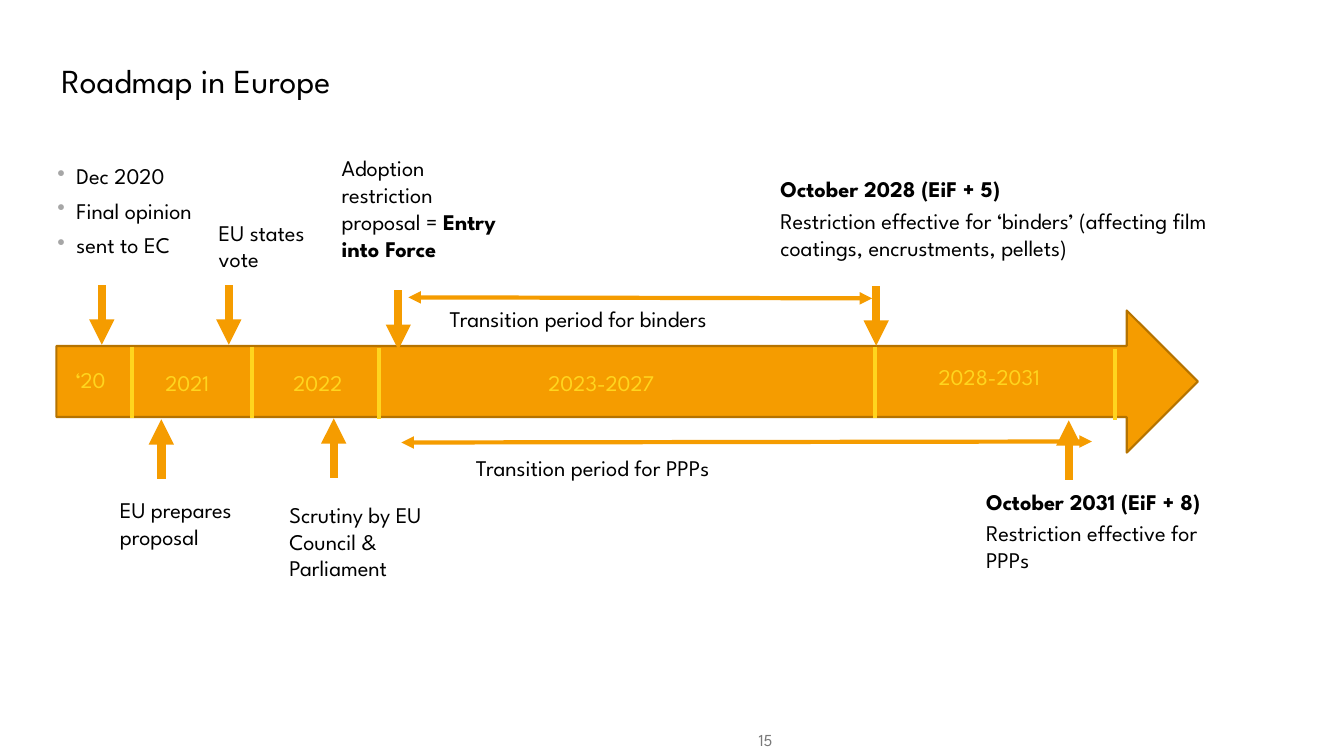
from lxml import etree
from pptx import Presentation
from pptx.dml.color import RGBColor
from pptx.enum.shapes import MSO_CONNECTOR, MSO_SHAPE
from pptx.enum.text import MSO_ANCHOR, PP_ALIGN
from pptx.oxml.ns import qn
from pptx.util import Inches, Pt

STRAIGHT = MSO_CONNECTOR.STRAIGHT
RIGHT_ARROW = MSO_SHAPE.RIGHT_ARROW
MIDDLE = MSO_ANCHOR.MIDDLE
RIGHT = PP_ALIGN.RIGHT

FONT = "League Spartan"
BLACK = RGBColor(0x00, 0x00, 0x00)
GREY = RGBColor(0x79, 0x79, 0x79)
BULLET_GREY = RGBColor(0xA6, 0xA6, 0xA6)
ORANGE = RGBColor(0xF5, 0x9C, 0x00)
DARK_ORANGE = RGBColor(0xB5, 0x73, 0x00)
YELLOW = RGBColor(0xFF, 0xD5, 0x1E)

DIVIDERS = [(1.31, 3.44), (2.5, 3.44), (3.76, 3.45), (8.68, 3.44), (11.06, 3.46)]
DOWN_MARKERS = [(1.01, 2.83), (2.27, 2.83), (3.95, 2.88), (8.69, 2.84)]
UP_MARKERS = [(1.6, 4.75), (3.31, 4.74), (10.6, 4.76)]
MARKER_LENGTH = 0.59
DIVIDER_LENGTH = 0.71
PERIODS = [((3.98, 4.39), (10.83, 4.38)), ((4.05, 2.95), (8.65, 2.96))]

YEARS = [
    ("‘20", 0.64, 3.58, 0.86),
    ("2021", 1.53, 3.61, 0.86),
    ("2022", 2.8, 3.61, 0.86),
    ("2023-2027", 5.33, 3.61, 1.53),
    ("2028-2031", 9.2, 3.55, 1.49),
]

LABELS = [
    ((1.08, 4.87, 1.56, 1.04), [[("EU prepares proposal", False)]]),
    ((3.28, 1.48, 1.94, 1.34),
     [[("Adoption restriction proposal = ", False), ("Entry into Force", True)]]),
    ((3.28 - 0.52, 4.92, 1.67, 0.97), [[("Scrutiny by EU Council & Parliament", False)]]),
    ((2.06, 2.12, 1.23, 1.01), [[("EU states vote", False)]]),
    ((7.63, 1.69, 4.91, 1.34),
     [[("October 2028 (EiF + 5)", True)],
      [("Restriction effective for ‘binders’ (affecting film coatings, encrustments, pellets)",
        False)]]),
    ((4.35, 2.98, 3.39, 0.39), [[("Transition period for binders", False)]]),
    ((4.61, 4.46, 3.83, 0.39), [[("Transition period for PPPs", False)]]),
    ((9.67, 4.79, 2.73, 1.34),
     [[("October 2031 (EiF + 8)", True)], [("Restriction effective for PPPs", False)]]),
]


def add_bullet(para):
    properties = para._p.get_or_add_pPr()
    properties.set("marL", str(Inches(0.19)))
    properties.set("indent", str(-Inches(0.19)))
    color = etree.SubElement(properties, qn("a:buClr"))
    etree.SubElement(color, qn("a:srgbClr"), val=str(BULLET_GREY))
    etree.SubElement(properties, qn("a:buChar"), char="•")


def add_text(page, place, paragraphs, size=16, color=BLACK, side=0.11, gap=3.5,
             line_spacing=None, bullets=False):
    box = page.shapes.add_textbox(*map(Inches, place))
    frame = box.text_frame
    frame.word_wrap = True
    frame.margin_left = frame.margin_right = Inches(side)
    for index, spans in enumerate(paragraphs):
        para = frame.paragraphs[0] if index == 0 else frame.add_paragraph()
        if bullets:
            add_bullet(para)
        if index:
            para.space_before = Pt(gap)
        if line_spacing:
            para.line_spacing = line_spacing
        for words, bold in spans:
            span = para.add_run()
            span.text = words
            span.font.name = FONT
            span.font.size = Pt(size)
            span.font.bold = bold
            span.font.color.rgb = color
    return frame


def add_line(page, start, end, color, width, ends=()):
    line = page.shapes.add_connector(STRAIGHT, *map(Inches, start + end))
    line.line.color.rgb = color
    line.line.width = Pt(width)
    for name in ends:
        etree.SubElement(line.line._get_or_add_ln(), qn(name), type="triangle")
    etree.SubElement(line._element.spPr, qn("a:effectLst"))


def add_marker(page, x, start, length):
    add_line(page, (x, start), (x, start + length), ORANGE, 6, ["a:tailEnd"])


def add_timeline(page):
    timeline = page.shapes.add_shape(RIGHT_ARROW, *map(Inches, (0.56, 3.08, 11.32, 1.41)))
    timeline.shadow.inherit = False
    timeline.fill.solid()
    timeline.fill.fore_color.rgb = ORANGE
    timeline.line.color.rgb = DARK_ORANGE
    timeline.line.width = Pt(1.5)


def main():
    deck = Presentation()
    deck.slide_width = Inches(13.33)
    deck.slide_height = Inches(7.5)
    page = deck.slides.add_slide(deck.slide_layouts[6])

    number = add_text(page, (5.4, 7.24, 2.36, 0.2), [[("15", False)]],
                      size=12, color=GREY, side=0.1)
    number.vertical_anchor = MIDDLE
    number.paragraphs[0].alignment = RIGHT
    add_text(page, (0.51, 0.59, 11.81, 0.55), [[("Roadmap in Europe", False)]],
             size=24, side=0.1, line_spacing=0.9)
    opinion = ["Dec 2020", "Final opinion", "sent to EC"]
    add_text(page, (0.47, 1.59, 1.78, 1.57), [[(words, False)] for words in opinion],
             side=0.1, gap=7.5, line_spacing=0.9, bullets=True)

    add_timeline(page)
    for x, top in DIVIDERS:
        add_line(page, (x, top), (x, top + DIVIDER_LENGTH), YELLOW, 3)
    for x, top in DOWN_MARKERS:
        add_marker(page, x, top, MARKER_LENGTH)
    for start, end in PERIODS:
        add_line(page, start, end, ORANGE, 3, ["a:headEnd", "a:tailEnd"])
    for x, bottom in UP_MARKERS:
        add_marker(page, x, bottom, -MARKER_LENGTH)

    for year, left, top, width in YEARS:
        add_text(page, (left, top, width, 0.44), [[(year, False)]], color=YELLOW)
    for place, paragraphs in LABELS:
        add_text(page, place, paragraphs)

    deck.save("out.pptx")


if __name__ == "__main__":
    main()
